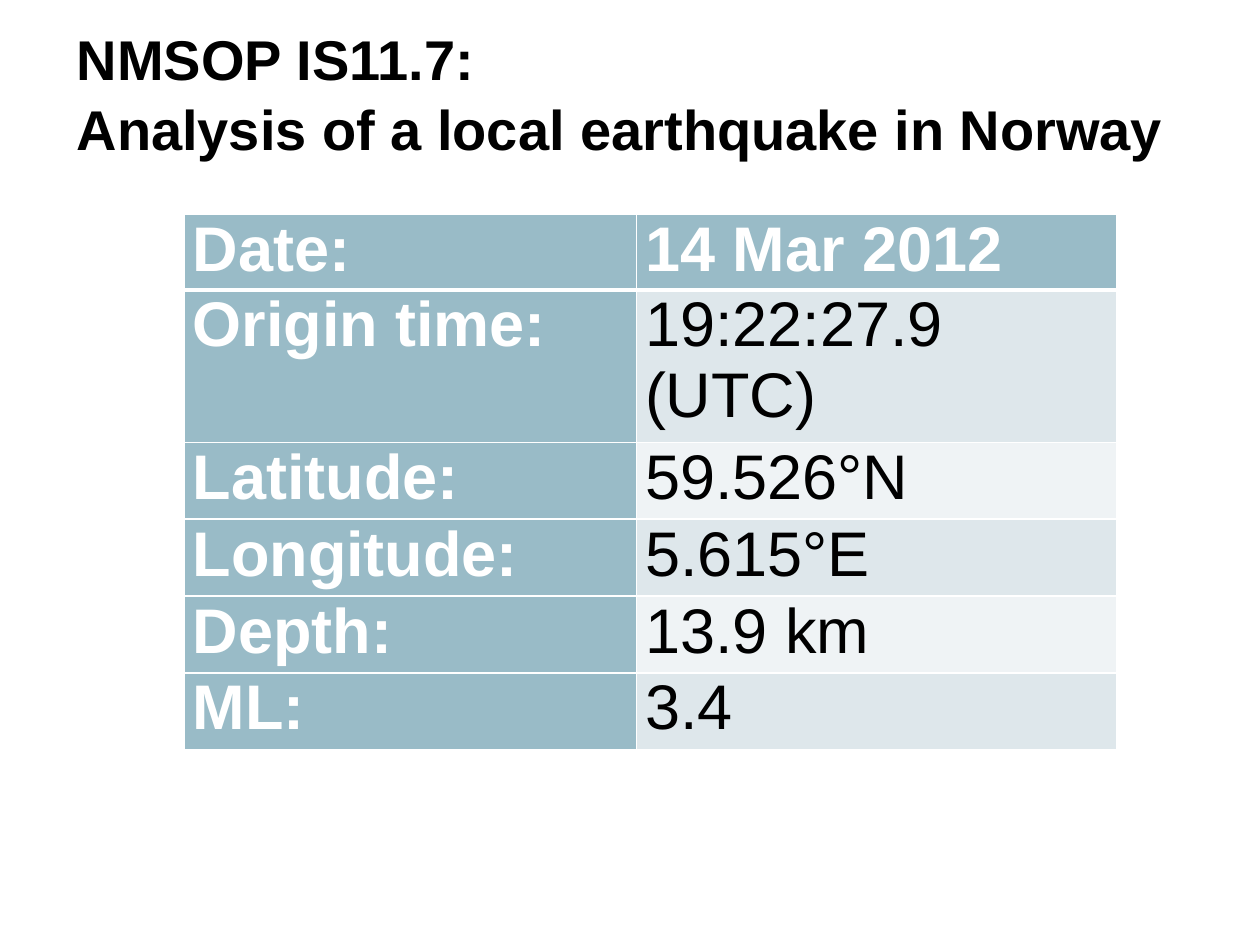
from lxml import etree
from pptx import Presentation
from pptx.dml.color import RGBColor
from pptx.enum import text
from pptx.oxml import ns
from pptx.util import Inches, Pt

WHITE, BLACK, TEAL = "FFFFFF", "000000", "99BBC7"
BANDS = ("EFF3F5", "DEE7EB")
COLUMN_WIDTHS = (3.59, 3.81)
ROW_HEIGHTS = (0.45, 1.21, 0.61, 0.61, 0.61, 0.61)
EARTHQUAKE = (
    ("Date:", "14 Mar 2012"),
    ("Origin time:", "19:22:27.9 (UTC)"),
    ("Latitude:", "59.526°N"),
    ("Longitude:", "5.615°E"),
    ("Depth:", "13.9 km"),
    ("ML:", "3.4"),
)


def color(value):
    """Turn a hex string into a colour."""
    return RGBColor.from_string(value)


def add_span(para, words, size, ink, bold):
    """Add one formatted run to a paragraph."""
    span = para.add_run()
    span.text = words
    span.font.name = "Arial"
    span.font.size = Pt(size)
    span.font.bold = bold
    span.font.color.rgb = color(ink)


def add_title(page, lines):
    """Add the heading, one line per string."""
    box = page.shapes.add_textbox(Inches(0.51), Inches(0.38), Inches(9), Inches(0.69))
    frame = box.text_frame
    frame.word_wrap = True
    frame.vertical_anchor = text.MSO_ANCHOR.MIDDLE
    para = frame.paragraphs[0]
    para.line_spacing = 1.04
    for index, line in enumerate(lines):
        if index:
            para.add_line_break()
        add_span(para, line, 32, BLACK, True)


def set_borders(cell, widths):
    """Draw white cell borders with a width in points for each side."""
    properties = cell._tc.get_or_add_tcPr()
    for index, (side, width) in enumerate(widths.items()):
        line = etree.Element(ns.qn(f"a:ln{side}"), w=str(Pt(width)))
        fill = etree.SubElement(line, ns.qn("a:solidFill"))
        etree.SubElement(fill, ns.qn("a:srgbClr"), val=WHITE)
        properties.insert(index, line)


def fill_cell(cell, words, row, column):
    """Write and style one cell according to its place in the table."""
    heading = row == 0 or column == 0
    cell.margin_left = cell.margin_right = Inches(0.07)
    cell.margin_top = cell.margin_bottom = 0
    cell.fill.solid()
    cell.fill.fore_color.rgb = color(TEAL if heading else BANDS[row % 2])
    para = cell.text_frame.paragraphs[0]
    para.alignment = text.PP_ALIGN.JUSTIFY
    add_span(para, words, 36, WHITE if heading else BLACK, heading)
    top = 3 if row == 1 else 1
    bottom = 3 if row == 0 else 1
    set_borders(cell, {"L": 1, "R": 1, "T": top, "B": bottom})


def add_earthquake_table(page):
    """Add the table of earthquake parameters."""
    frame = page.shapes.add_table(
        len(EARTHQUAKE), len(COLUMN_WIDTHS), Inches(1.46), Inches(1.7),
        Inches(sum(COLUMN_WIDTHS)), Inches(sum(ROW_HEIGHTS)))
    table = frame.table
    table.first_col = True
    for column, width in zip(table.columns, COLUMN_WIDTHS):
        column.width = Inches(width)
    for row, (height, entries) in enumerate(zip(ROW_HEIGHTS, EARTHQUAKE)):
        table.rows[row].height = Inches(height)
        for column, words in enumerate(entries):
            fill_cell(table.cell(row, column), words, row, column)


def main():
    """Build and save the slide."""
    deck = Presentation()
    deck.slide_width, deck.slide_height = Inches(10), Inches(7.5)
    page = deck.slides.add_slide(deck.slide_layouts[6])
    add_title(page, ("NMSOP IS11.7:", "Analysis of a local earthquake in Norway"))
    add_earthquake_table(page)
    deck.save("out.pptx")


if __name__ == "__main__":
    main()
